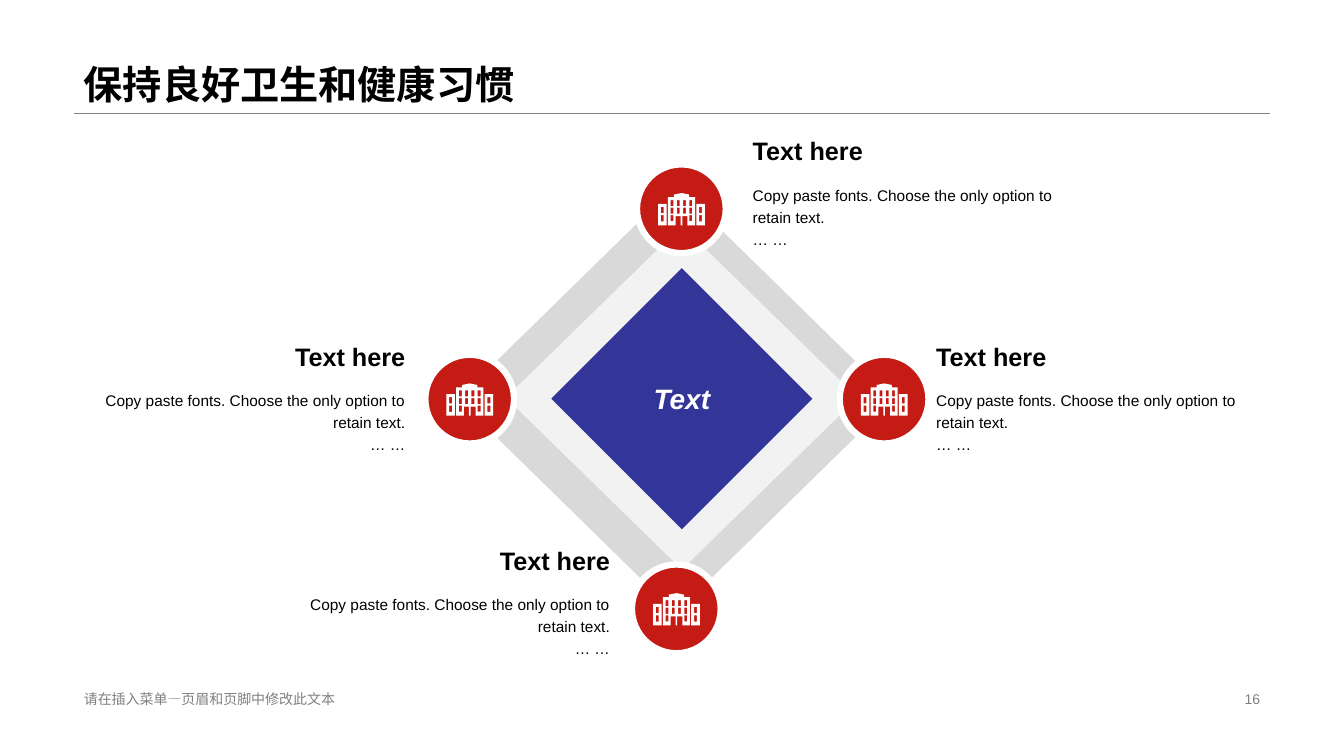
from lxml import etree
from pptx import Presentation
from pptx.dml.color import RGBColor
from pptx.enum import shapes, text
from pptx.oxml import ns
from pptx.util import Pt

BLACK = RGBColor(0x00, 0x00, 0x00)
WHITE = RGBColor(0xFF, 0xFF, 0xFF)
GRAY = RGBColor(0x80, 0x80, 0x80)
MID_GRAY = RGBColor(0xD9, 0xD9, 0xD9)
PALE_GRAY = RGBColor(0xF2, 0xF2, 0xF2)
BLUE = RGBColor(0x33, 0x35, 0x99)
RED = RGBColor(0xC4, 0x1C, 0x15)

FONT = "Arial"
LEFT, CENTER, RIGHT = text.PP_ALIGN.LEFT, text.PP_ALIGN.CENTER, text.PP_ALIGN.RIGHT
TOP, MIDDLE, BOTTOM = text.MSO_ANCHOR.TOP, text.MSO_ANCHOR.MIDDLE, text.MSO_ANCHOR.BOTTOM

HEADING = "Text here"
BODY = "Copy paste fonts. Choose the only option to retain text.\n… …"
BADGE_SIZE = 63.4
ICON_UNIT = Pt(0.072)
ICON_WIDTH = 464

DIAMONDS = [
    (326.9, 132.5, 311.8, 305.3, MID_GRAY),
    (361.4, 161.3, 251.3, 245.5, PALE_GRAY),
    (393.8, 191.5, 186.5, 186.5, BLUE),
]
BADGES = [(455, 117.4), (599.8, 253.4), (303.8, 253.4), (451.4, 403.2)]
CAPTIONS = [
    (530.6, 88.6, 258.5, LEFT),
    (661.7, 235.4, 244.8, LEFT),
    (51.8, 235.4, 244.8, RIGHT),
    (198, 380.9, 244.8, RIGHT),
]


def write_text(shape, content, size, color=BLACK, bold=False, italic=False,
               align=LEFT, anchor=TOP, spacing=1.0):
    frame = shape.text_frame
    frame.word_wrap = True
    frame.vertical_anchor = anchor
    frame.text = content
    for paragraph in frame.paragraphs:
        paragraph.alignment = align
        paragraph.line_spacing = spacing
        for run in paragraph.runs:
            run.font.name = FONT
            run.font.size = Pt(size)
            run.font.bold = bold
            run.font.italic = italic
            run.font.color.rgb = color


def add_text(slide, box, content, size, **style):
    shape = slide.shapes.add_textbox(*map(Pt, box))
    write_text(shape, content, size, **style)


def paint(shape, fill, line=None, line_width=0):
    shape.shadow.inherit = False
    shape.fill.solid()
    shape.fill.fore_color.rgb = fill
    if line is None:
        shape.line.fill.background()
    else:
        shape.line.color.rgb = line
        shape.line.width = Pt(line_width)


def add_rule(slide, left, right, y):
    rule = slide.shapes.add_connector(
        shapes.MSO_CONNECTOR.STRAIGHT, Pt(left), Pt(y), Pt(right), Pt(y))
    rule.line.color.rgb = GRAY
    rule.line.width = Pt(0.25)
    etree.SubElement(rule._element.spPr, ns.qn("a:effectLst"))


def add_diamond(slide, left, top, width, height, fill):
    diamond = slide.shapes.add_shape(
        shapes.MSO_SHAPE.DIAMOND, Pt(left), Pt(top), Pt(width), Pt(height))
    paint(diamond, fill)
    return diamond


def rectangle(left, top, width, height):
    right, bottom = left + width, top + height
    return [(left, top), (left, bottom), (right, bottom), (right, top)]


def building_contours():
    right_half = [(232, 0), (308, 15), (308, 40), (367, 40), (367, 320),
                  (290, 320), (290, 230), (240, 230), (240, 320)]
    left_half = [(ICON_WIDTH - x, y) for x, y in reversed(right_half[1:])]
    wings = [rectangle(x, 107, 85, 213) for x in (0, 379)]
    wing_windows = [rectangle(x, y, 28, 62) for x in (28, 408) for y in (137, 220)]
    windows = [rectangle(125 + 62 * column, 70 + 75 * row, 28, 60)
               for row in range(3) for column in range(4)
               if row < 2 or column in (0, 3)]
    return [right_half + left_half] + wings + wing_windows + windows


def add_building(slide, left, top):
    first, *others = building_contours()
    builder = slide.shapes.build_freeform(*first[0], scale=ICON_UNIT)
    builder.add_line_segments(first[1:], close=True)
    for contour in others:
        builder.move_to(*contour[0])
        builder.add_line_segments(contour[1:], close=True)
    paint(builder.convert_to_shape(Pt(left), Pt(top)), WHITE)


def add_badge(slide, left, top):
    circle = slide.shapes.add_shape(
        shapes.MSO_SHAPE.OVAL, Pt(left), Pt(top), Pt(BADGE_SIZE), Pt(BADGE_SIZE))
    paint(circle, RED, WHITE, 4.5)
    add_building(slide, left + 15.1, top + 20.5)


def add_caption(slide, left, top, width, align):
    add_text(slide, (left, top, width, 38.2), HEADING, 18,
             bold=True, align=align, anchor=MIDDLE)
    add_text(slide, (left, top + 37.8, width, 65.5), BODY, 11,
             align=align, spacing=1.2)


def main():
    presentation = Presentation()
    presentation.slide_width = Pt(960)
    presentation.slide_height = Pt(540)
    slide = presentation.slides.add_slide(presentation.slide_layouts[6])

    add_rule(slide, 52.8, 907.2, 80.9)
    add_text(slide, (52.8, 0, 854.4, 80.9), "保持良好卫生和健康习惯", 28,
             bold=True, anchor=BOTTOM, spacing=0.9)
    add_text(slide, (52.8, 491, 326.2, 16.6), "请在插入菜单—页眉和页脚中修改此文本", 10,
             color=GRAY, anchor=MIDDLE)
    add_text(slide, (678.2, 491, 229, 16.6), "16", 10,
             color=GRAY, align=RIGHT, anchor=MIDDLE)

    diamonds = [add_diamond(slide, *diamond) for diamond in DIAMONDS]
    write_text(diamonds[-1], "Text", 20, color=WHITE, bold=True, italic=True,
               align=CENTER, anchor=MIDDLE)
    for badge in BADGES:
        add_badge(slide, *badge)
    for caption in CAPTIONS:
        add_caption(slide, *caption)

    presentation.save("out.pptx")


if __name__ == "__main__":
    main()
